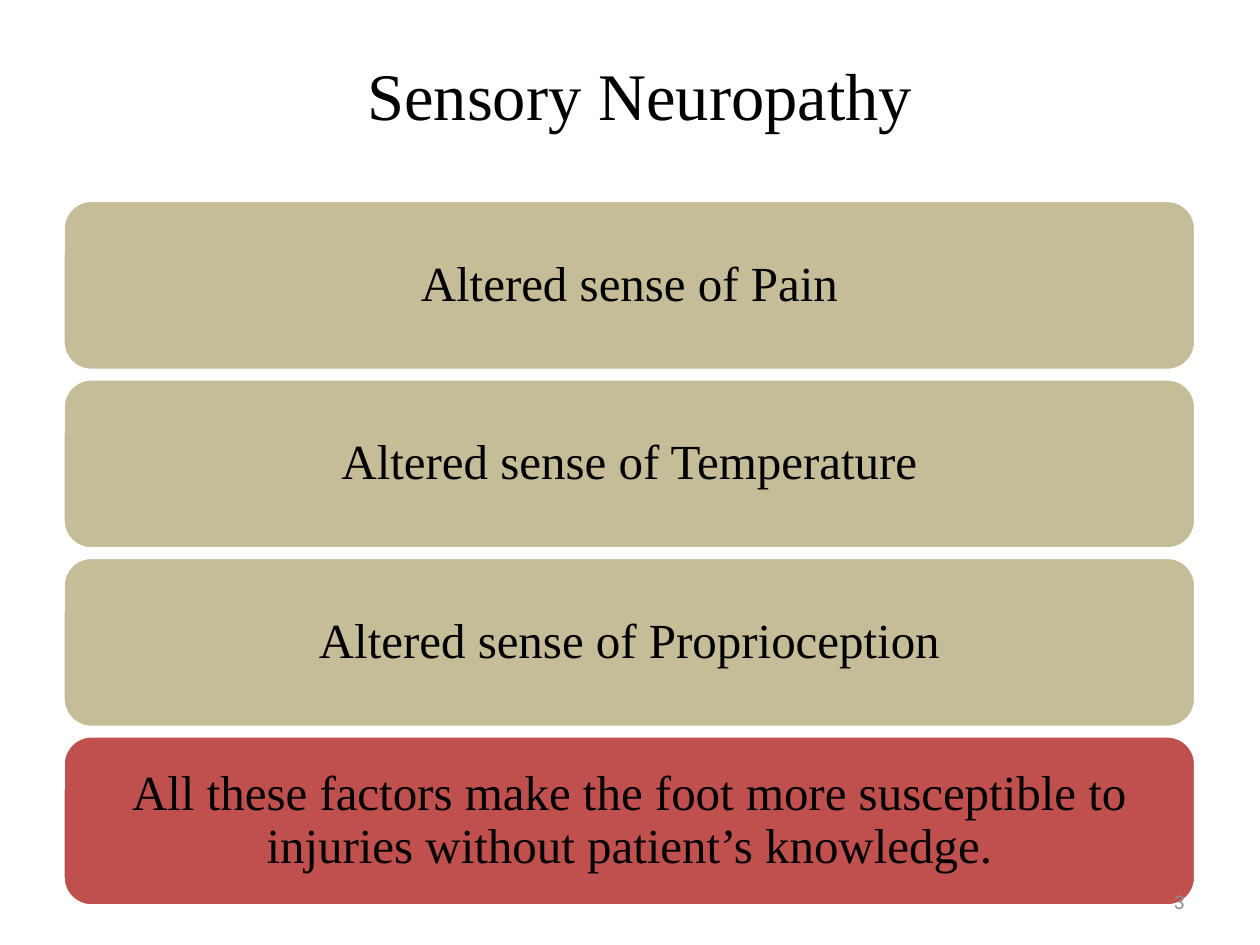
from pptx import Presentation
from pptx.dml.color import RGBColor
from pptx.enum.shapes import MSO_SHAPE
from pptx.enum.text import MSO_ANCHOR, PP_ALIGN
from pptx.util import Inches, Pt

COLORS = {"text": "000000", "symptom": "C4BD97", "warning": "C0504D",
          "outline": "FFFFFF", "number": "8C8C8C"}
SERIF, SANS = "Times New Roman", "Calibri"

# Rows of the bar stack, in inches
LEFT, TOP, WIDTH, HEIGHT = 0.5, 1.59, 8.99, 1.35
LAST_TOP = 5.84

BARS = [
    ("Altered sense of Pain", "symptom"),
    ("Altered sense of Temperature", "symptom"),
    ("Altered sense of Proprioception", "symptom"),
    ("All these factors make the foot more susceptible to injuries "
     "without patient’s knowledge.", "warning"),
]
PITCH = (LAST_TOP - TOP) / (len(BARS) - 1)


class SlideBuilder:
    def __init__(self, deck):
        self.slide = deck.slides.add_slide(deck.slide_layouts[5])

    def color(self, name):
        return RGBColor.from_string(COLORS[name])

    def add_words(self, frame, words, size, font=SERIF, color="text",
                  align=PP_ALIGN.CENTER):
        frame.word_wrap = True
        frame.vertical_anchor = MSO_ANCHOR.MIDDLE
        paragraph = frame.paragraphs[0]
        paragraph.alignment = align
        run = paragraph.add_run()
        run.text = words
        run.font.size = Pt(size)
        run.font.name = font
        run.font.color.rgb = self.color(color)
        return paragraph

    def title(self, words):
        heading = self.slide.shapes.title
        heading.left, heading.top = Inches(0.58), Inches(0.33)
        heading.width, heading.height = Inches(9), Inches(0.83)
        self.add_words(heading.text_frame, words, 38)

    def bar(self, row, words, fill):
        bar = self.slide.shapes.add_shape(
            MSO_SHAPE.ROUNDED_RECTANGLE, Inches(LEFT),
            Inches(TOP + row * PITCH), Inches(WIDTH), Inches(HEIGHT))
        bar.shadow.inherit = False
        bar.fill.solid()
        bar.fill.fore_color.rgb = self.color(fill)
        bar.line.color.rgb = self.color("outline")
        bar.line.width = Pt(2)
        frame = bar.text_frame
        frame.margin_left = frame.margin_right = Inches(0.12)
        frame.margin_top = frame.margin_bottom = Inches(0.06)
        self.add_words(frame, words, 28).line_spacing = 0.9

    def page_number(self, number):
        corner = self.slide.shapes.add_textbox(
            Inches(7.17), Inches(6.95), Inches(2.33), Inches(0.4))
        self.add_words(corner.text_frame, number, 12, SANS, "number",
                       PP_ALIGN.RIGHT)


def main():
    deck = Presentation()
    deck.slide_width, deck.slide_height = Inches(10), Inches(7.5)
    builder = SlideBuilder(deck)

    # Heading
    builder.title("Sensory Neuropathy")

    # Symptoms and their consequence
    for row, (words, fill) in enumerate(BARS):
        builder.bar(row, words, fill)

    # Footer
    builder.page_number("3")
    deck.save("out.pptx")


if __name__ == "__main__":
    main()
